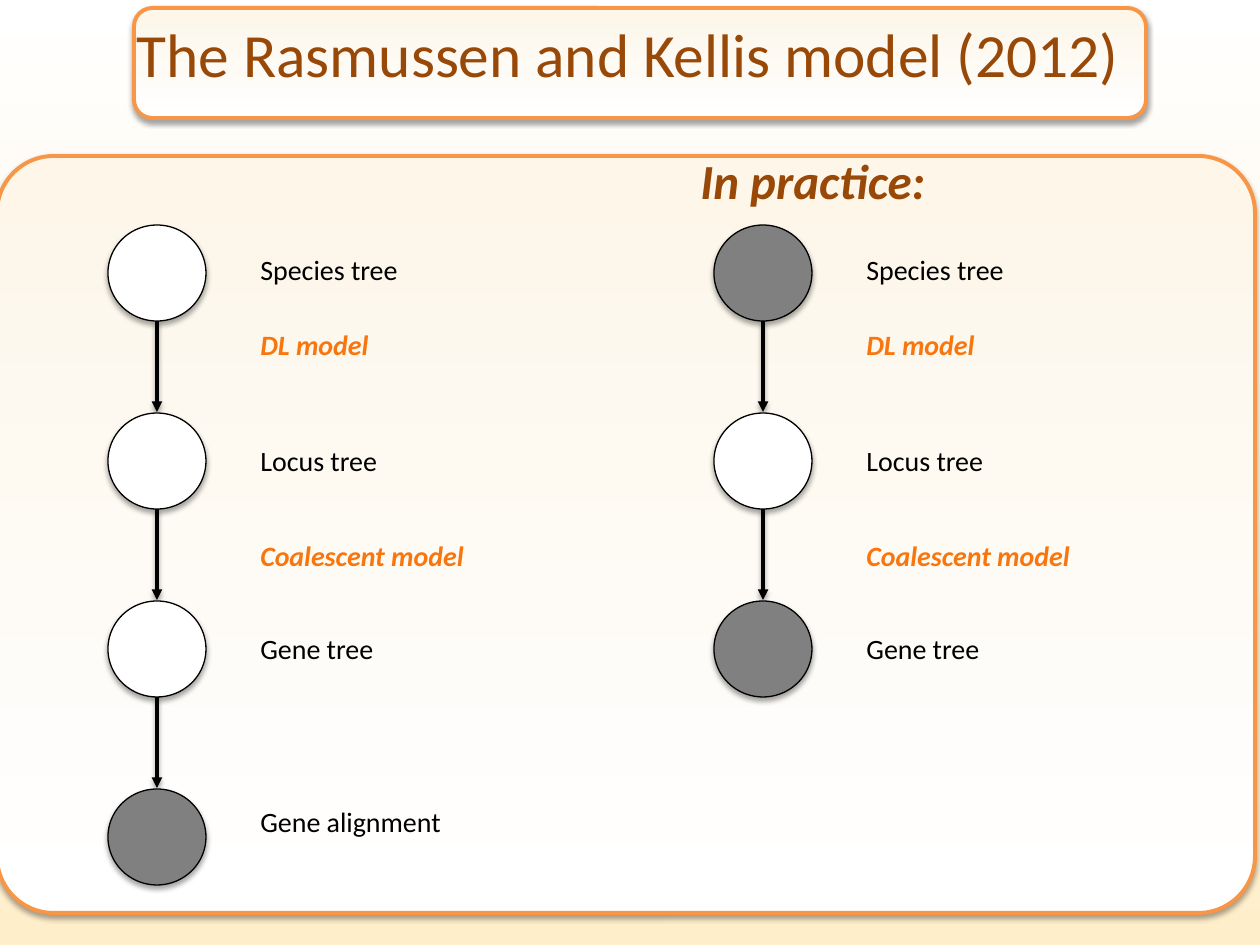
from lxml import etree
from pptx import Presentation
from pptx import util as u
from pptx.dml.color import RGBColor
from pptx.enum import shapes, text
from pptx.oxml import ns

PX = 914400 / 126
FONT = "Calibri"
BLACK = RGBColor(0x00, 0x00, 0x00)
WHITE = RGBColor(0xFF, 0xFF, 0xFF)
GRAY = RGBColor(0x80, 0x80, 0x80)
CREAM = RGBColor(0xFD, 0xF6, 0xE9)
SAND = RGBColor(0xFF, 0xEE, 0xCA)
ORANGE = RGBColor(0xF7, 0x96, 0x46)
BRIGHT_ORANGE = RGBColor(0xF9, 0x76, 0x0E)
BROWN = RGBColor(0x98, 0x48, 0x07)

NODE_WIDTH, NODE_HEIGHT, NODE_PITCH = 98, 96, 188
ARROW_LENGTH = 91
LABEL_INDENT = 140

SPECIES = ("Species tree", 21, "DL model", 96)
LOCUS = ("Locus tree", 24, "Coalescent model", 119)
GENE = ("Gene tree", 24, None, 0)
ALIGNMENT = ("Gene alignment", 9, None, 0)


def px(*lengths):
    return [u.Emu(round(length * PX)) for length in lengths]


def set_gradient(fill, first, last, angle):
    fill.gradient()
    fill.gradient_angle = angle
    for stop, color in zip(fill.gradient_stops, (first, last)):
        stop.color.rgb = color


def add_shadow(shape, distance, opacity):
    properties = shape.element.spPr
    effects = properties.find(ns.qn("a:effectLst"))
    if effects is None:
        effects = etree.SubElement(properties, ns.qn("a:effectLst"))
    shadow = etree.SubElement(
        effects, ns.qn("a:outerShdw"), blurRad=str(u.Pt(3.1)),
        dist=str(u.Pt(distance)), dir="5400000", rotWithShape="0")
    color = etree.SubElement(shadow, ns.qn("a:srgbClr"), val=str(BLACK))
    etree.SubElement(color, ns.qn("a:alpha"), val=str(opacity * 1000))


def add_outlined(slide, kind, box, line_color, line_width):
    shape = slide.shapes.add_shape(kind, *px(*box))
    shape.line.color.rgb = line_color
    shape.line.width = u.Pt(line_width)
    shape.shadow.inherit = False
    add_shadow(shape, 1.8, 35)
    return shape


def add_panel(slide, box):
    panel = add_outlined(slide, shapes.MSO_SHAPE.ROUNDED_RECTANGLE, box, ORANGE, 2.25)
    set_gradient(panel.fill, WHITE, CREAM, 90)
    return panel


def format_text(paragraph, size, color, emphasis=False):
    font = paragraph.font
    font.name, font.size, font.color.rgb = FONT, u.Pt(size), color
    font.bold = font.italic = emphasis


def add_label(slide, box, wording, size, color, emphasis=False):
    frame = slide.shapes.add_textbox(*px(*box)).text_frame
    frame.word_wrap = True
    frame.auto_size = text.MSO_AUTO_SIZE.SHAPE_TO_FIT_TEXT
    frame.text = wording
    format_text(frame.paragraphs[0], size, color, emphasis)


def add_arrow(slide, x, top):
    arrow = slide.shapes.add_connector(
        shapes.MSO_CONNECTOR.STRAIGHT, *px(x, top, x, top + ARROW_LENGTH))
    arrow.line.color.rgb = BLACK
    arrow.line.width = u.Pt(2)
    outline = arrow.element.spPr.find(ns.qn("a:ln"))
    etree.SubElement(outline, ns.qn("a:tailEnd"), type="triangle")
    add_shadow(arrow, 1.6, 38)


def add_header(slide, box):
    left, top, width, height = box
    title = slide.shapes.title
    title.element.addprevious(add_panel(slide, box).element)
    title.left, title.top, title.width, title.height = px(
        left - 25, top - 25, width + 25, height + 30)
    frame = title.text_frame
    frame.text = "The Rasmussen and Kellis model (2012)"
    frame.word_wrap = True
    frame.auto_size = text.MSO_AUTO_SIZE.NONE
    frame.vertical_anchor = text.MSO_ANCHOR.MIDDLE
    paragraph = frame.paragraphs[0]
    paragraph.alignment = text.PP_ALIGN.CENTER
    format_text(paragraph, 35.1, BROWN)


def add_chain(slide, left, top, steps, observed):
    label_left = left + LABEL_INDENT
    for index, step in enumerate(steps):
        name, name_offset, model, model_offset = step
        node_top = top + index * NODE_PITCH
        node = add_outlined(slide, shapes.MSO_SHAPE.OVAL,
                            (left, node_top, NODE_WIDTH, NODE_HEIGHT), BLACK, 0.75)
        node.fill.solid()
        node.fill.fore_color.rgb = GRAY if step in observed else WHITE
        add_label(slide, (label_left, node_top + name_offset, 347, 47), name, 16, BLACK)
        if model:
            add_label(slide, (label_left, node_top + model_offset, 291, 47),
                      model, 16, BRIGHT_ORANGE, True)
        if index < len(steps) - 1:
            add_arrow(slide, left + NODE_WIDTH / 2, node_top + NODE_HEIGHT)


def add_body(slide, box):
    left, top = box[:2]
    panel = add_panel(slide, box)
    panel.adjustments[0] = 0.075
    add_chain(slide, left + 111, top + 69,
              [SPECIES, LOCUS, GENE, ALIGNMENT], [ALIGNMENT])
    add_chain(slide, left + 717, top + 69,
              [SPECIES, LOCUS, GENE], [SPECIES, GENE])
    add_label(slide, (left + 691, top - 12, 426, 72), "In practice:", 28, BROWN, True)


def main():
    presentation = Presentation()
    presentation.slide_width, presentation.slide_height = px(1260, 945)
    slide = presentation.slides.add_slide(presentation.slide_layouts[5])
    set_gradient(slide.background.fill, WHITE, SAND, 270)
    add_header(slide, (134, 8, 1012, 110))
    add_body(slide, (-3, 156, 1258, 757))
    presentation.save("out.pptx")


if __name__ == "__main__":
    main()
